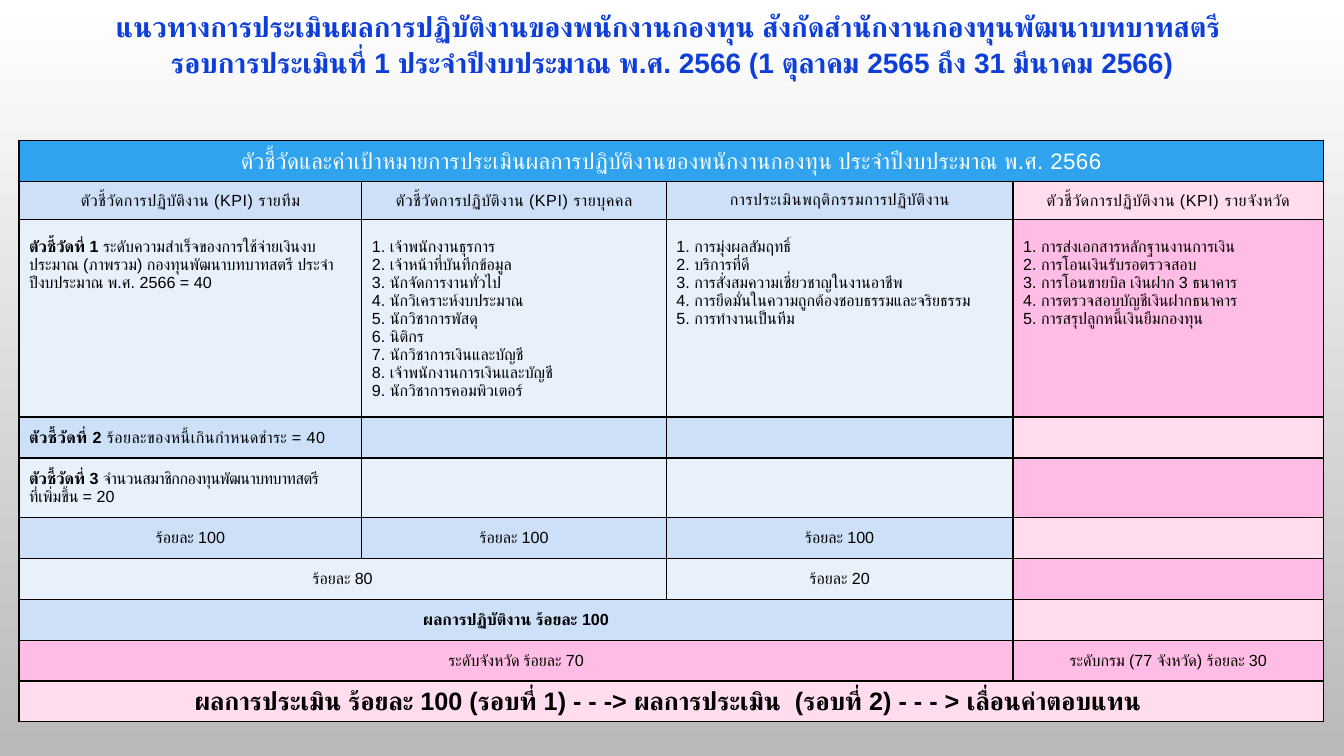
from dataclasses import dataclass

from lxml import etree
from pptx import Presentation
from pptx.dml.color import RGBColor
from pptx.enum.text import MSO_ANCHOR, MSO_AUTO_SIZE, PP_ALIGN
from pptx.oxml.ns import qn
from pptx.util import Cm, Pt

TOP, MIDDLE = MSO_ANCHOR.TOP, MSO_ANCHOR.MIDDLE
LEFT, CENTER = PP_ALIGN.LEFT, PP_ALIGN.CENTER
FIXED = MSO_AUTO_SIZE.NONE


@dataclass(frozen=True)
class Theme:
    """Colours, font and type sizes of the slide."""
    font: str = "Arial"
    title: str = "0E3EDA"
    ink: str = "000000"
    white: str = "FFFFFF"
    grey: str = "B9B9B9"
    head: str = "2FA3EE"
    blues: tuple = ("E8F0FC", "CDE0F8")
    pinks: tuple = ("FFBDE6", "FFDDEE")
    title_size: float = 20
    head_size: float = 16
    size: float = 11.5
    foot_size: float = 18


THEME = Theme()
TITLE = ("แนวทางการประเมินผลการปฏิบัติงานของพนักงานกองทุน สังกัดสำนักงานกองทุนพัฒนาบทบาทสตรี \v"
         "รอบการประเมินที่ 1 ประจำปีงบประมาณ พ.ศ. 2566 (1 ตุลาคม 2565 ถึง 31 มีนาคม 2566)")
COLS = (8.64, 7.67, 8.74, 7.82)
ROWS = (1.03, 0.96, 4.97, 1.03, 1.5) + (1.03,) * 5
HEAD, LISTS, KPIS, FOOT = 0, 2, (2, 3, 4), 9
BOLD = (7, FOOT)
PINK_COL, PINK_ROW = 3, 8
SPACING = {0: 30, 1: 40, 3: 30}
TIGHT = -30
TEXTS = (
    ("ตัวชี้วัดและค่าเป้าหมายการประเมินผลการปฏิบัติงานของพนักงานกองทุน ประจำปีงบประมาณ พ.ศ. 2566",),
    ("ตัวชี้วัดการปฏิบัติงาน (KPI) รายทีม",
     "ตัวชี้วัดการปฏิบัติงาน (KPI) รายบุคคล",
     "การประเมินพฤติกรรมการปฏิบัติงาน",
     "ตัวชี้วัดการปฏิบัติงาน (KPI) รายจังหวัด"),
    ("ตัวชี้วัดที่ 1| ระดับความสำเร็จของการใช้จ่ายเงินงบประมาณ (ภาพรวม) "
     "กองทุนพัฒนาบทบาทสตรี ประจำปีงบประมาณ พ.ศ. 2566 = 40",
     "1. เจ้าพนักงานธุรการ\n2. เจ้าหน้าที่บันทึกข้อมูล\n3. นักจัดการงานทั่วไป\n"
     "4. นักวิเคราะห์งบประมาณ\n5. นักวิชาการพัสดุ\n6. นิติกร\n"
     "7. นักวิชาการเงินและบัญชี\n8. เจ้าพนักงานการเงินและบัญชี\n9. นักวิชาการคอมพิวเตอร์",
     "1. การมุ่งผลสัมฤทธิ์\n2. บริการที่ดี\n3. การสั่งสมความเชี่ยวชาญในงานอาชีพ\n"
     "4. การยึดมั่นในความถูกต้องชอบธรรมและจริยธรรม\n5. การทำงานเป็นทีม",
     "1. การส่งเอกสารหลักฐานงานการเงิน\n2. การโอนเงินรับรอตรวจสอบ\n"
     "3. การโอนขายบิล เงินฝาก 3 ธนาคาร\n4. การตรวจสอบบัญชีเงินฝากธนาคาร\n"
     "5. การสรุปลูกหนี้เงินยืมกองทุน"),
    ("ตัวชี้วัดที่ 2| ร้อยละของหนี้เกินกำหนดชำระ = 40",),
    ("ตัวชี้วัดที่ 3 |จำนวนสมาชิกกองทุนพัฒนาบทบาทสตรี\vที่เพิ่มขึ้น = 20",),
    ("ร้อยละ 100",) * 3,
    ("ร้อยละ 80", "", "ร้อยละ 20"),
    ("ผลการปฏิบัติงาน ร้อยละ 100",),
    ("ระดับจังหวัด ร้อยละ 70", "", "", "ระดับกรม (77 จังหวัด) ร้อยละ 30"),
    ("ผลการประเมิน ร้อยละ 100 (รอบที่ 1) - - -> ผลการประเมิน  (รอบที่ 2) - - - > เลื่อนค่าตอบแทน ",),
)
SPANS = {0: 3, 6: 1, 7: 2, 8: 2, 9: 3}


def rgb(code):
    """Turn a hex code into a colour."""
    return RGBColor.from_string(code)


def style(run, size, color, bold=False, space=0):
    """Format one run of text."""
    font = run.font
    font.name, font.size, font.bold = THEME.font, Pt(size), bold
    font.color.rgb = rgb(color)
    run._r.get_or_add_rPr().set("spc", str(space))


def paint(slide):
    """Fill the background with a vertical gradient."""
    fill = slide.background.fill
    fill.gradient()
    fill.gradient_angle = 270
    for stop, code, place in zip(fill.gradient_stops, (THEME.white, THEME.grey), (0, 1)):
        stop.color.rgb = rgb(code)
        stop.position = place


def add_title(slide):
    """Place and format the title."""
    title = slide.shapes.title
    title.left, title.top, title.width, title.height = Cm(0), Cm(-0.41), Cm(33.87), Cm(2.97)
    frame = title.text_frame
    frame.text = TITLE
    frame.auto_size, frame.vertical_anchor, frame.word_wrap = FIXED, MIDDLE, True
    para = frame.paragraphs[0]
    para.alignment, para.line_spacing = CENTER, Pt(26)
    for run in para.runs:
        style(run, THEME.title_size, THEME.title, True)


def frame_cell(cell):
    """Draw thin black borders round a cell."""
    props = cell._tc.get_or_add_tcPr()
    for side in ("a:lnL", "a:lnR", "a:lnT", "a:lnB"):
        line = etree.SubElement(props, qn(side), w=str(Pt(1)))
        fill = etree.SubElement(line, qn("a:solidFill"))
        etree.SubElement(fill, qn("a:srgbClr"), val=THEME.ink)


def write(cell, text, row):
    """Write a cell's text, with the part before a bar in bold."""
    size = {HEAD: THEME.head_size, FOOT: THEME.foot_size}.get(row, THEME.size)
    color = THEME.white if row == HEAD else THEME.ink
    space = SPACING.get(row, 0)
    cell.vertical_anchor = TOP if row == LISTS else MIDDLE
    if row == LISTS:
        cell.margin_top = Cm(0.46)
    lead, bar, rest = text.partition("|")
    frame = cell.text_frame
    frame.text = rest if bar else text
    for para in frame.paragraphs:
        para.alignment = LEFT if row in KPIS else CENTER
        for run in para.runs:
            style(run, size, color, row in BOLD, space)
    if bar:
        para = frame.paragraphs[0]
        first = para.runs[0]
        if len(para.runs) > 1:
            style(first, size, color, False, TIGHT)
        run = para.add_run()
        run.text = lead
        style(run, size, color, True, space)
        first._r.addprevious(run._r)


def add_grid(slide):
    """Build the table of measures and weights."""
    table = slide.shapes.add_table(len(ROWS), len(COLS), Cm(0.48), Cm(3.55),
                                   Cm(sum(COLS)), Cm(sum(ROWS))).table
    for col, width in zip(table.columns, COLS):
        col.width = Cm(width)
    for line, height in zip(table.rows, ROWS):
        line.height = Cm(height)
    for row, texts in enumerate(TEXTS):
        for col in range(len(COLS)):
            cell = table.cell(row, col)
            frame_cell(cell)
            pink = col == PINK_COL or row >= PINK_ROW
            shades = THEME.pinks if pink else THEME.blues
            cell.fill.solid()
            cell.fill.fore_color.rgb = rgb(THEME.head if row == HEAD else shades[row % 2])
            if col < len(texts) and texts[col]:
                write(cell, texts[col], row)
        if row in SPANS:
            table.cell(row, 0).merge(table.cell(row, SPANS[row]))


def main():
    """Build the slide and save it."""
    deck = Presentation()
    deck.slide_width, deck.slide_height = Cm(33.87), Cm(19.05)
    slide = deck.slides.add_slide(deck.slide_layouts[5])
    paint(slide)
    add_title(slide)
    add_grid(slide)
    deck.save("out.pptx")


if __name__ == "__main__":
    main()
